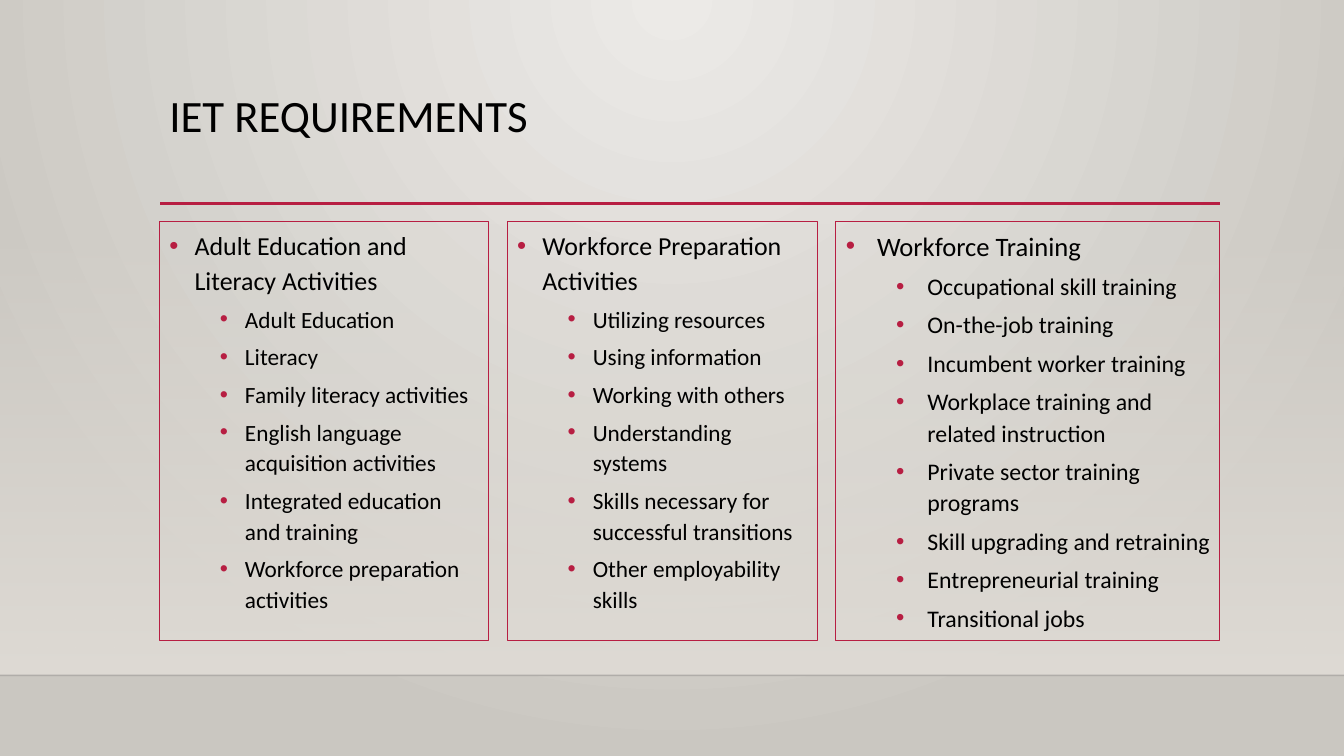
from dataclasses import dataclass

from lxml.etree import SubElement
from pptx import Presentation
from pptx.dml.color import RGBColor
from pptx.enum.shapes import MSO_CONNECTOR as Connector, MSO_SHAPE as Preset
from pptx.enum.text import MSO_ANCHOR as Anchor, MSO_AUTO_SIZE as AutoSize, PP_ALIGN as Align
from pptx.oxml.ns import qn
from pptx.util import Pt

PX = 9144  # EMU in one px, 100 px to the inch
SLIDE_WIDTH, SLIDE_HEIGHT = 1333, 750
TWO_CONTENT = 3


@dataclass(frozen=True)
class Theme:
    font: str = "Calibri"
    text: str = "000000"
    accent: str = "B71E42"
    glow: tuple = ("ECEAE7", "CAC7C1")
    wall: str = "DFDBD5"
    floor_edge: str = "000001"
    title_size: float = 32


THEME = Theme()
PLACEHOLDER_STYLE = {"sizes": (18.5, 16.6), "hanging": 25, "grow": False}
TEXT_BOX_STYLE = {"sizes": (19, 17), "hanging": 31, "grow": True}
LEVEL_STEP = 50

COLUMNS = [
    ((158, 327), PLACEHOLDER_STYLE, "Adult Education and Literacy Activities", [
        "Adult Education", "Literacy", "Family literacy activities",
        "English language acquisition activities",
        "Integrated education and training", "Workforce preparation activities"]),
    ((503, 308), PLACEHOLDER_STYLE, "Workforce Preparation Activities", [
        "Utilizing resources", "Using information", "Working with others",
        "Understanding systems", "Skills necessary for successful transitions",
        "Other employability skills"]),
    ((829, 381), TEXT_BOX_STYLE, "Workforce Training", [
        "Occupational skill training", "On-the-job training",
        "Incumbent worker training", "Workplace training and related instruction",
        "Private sector training programs", "Skill upgrading and retraining",
        "Entrepreneurial training", "Transitional jobs"]),
]


def rgb(value):
    return RGBColor.from_string(value)


def emu(*lengths):
    return [length * PX for length in lengths]


def set_values(target, values):
    for name, value in values.items():
        setattr(target, name, value)


def set_alpha(color_element, percent):
    SubElement(color_element, qn("a:alpha"), val=str(percent * 1000))


def set_gradient(fill, colors):
    fill.gradient()
    for position, (stop, color) in enumerate(zip(fill.gradient_stops, colors)):
        stop.position = position
        stop.color.rgb = rgb(color)


def paint_background(slide):
    """Radial glow centred on the top edge."""
    set_gradient(slide.background.fill, THEME.glow)
    gradient = next(slide.element.iter(qn("a:gradFill")))
    gradient.remove(gradient.find(qn("a:lin")))
    circle = SubElement(gradient, qn("a:path"), path="circle")
    SubElement(circle, qn("a:fillToRect"), l="43000", t="0", r="43000", b="100000")


def add_rule(slide, box, color, weight, alpha=100):
    left, top, width = box
    rule = slide.shapes.add_connector(
        Connector.STRAIGHT, *emu(left, top, left + width, top))
    set_values(rule.line, {"width": Pt(weight)})
    rule.line.color.rgb = rgb(color)
    if alpha < 100:
        set_alpha(next(rule.element.iter(qn("a:srgbClr"))), alpha)
    SubElement(rule.element.spPr, qn("a:effectLst"))


def add_wall(slide, box):
    """Panel fading in downwards, closed by a faint line at its foot."""
    left, top, width, height = box
    wall = slide.shapes.add_shape(Preset.RECTANGLE, *emu(*box))
    wall.shadow.inherit = False
    wall.line.fill.background()
    set_gradient(wall.fill, (THEME.wall, THEME.wall))
    wall.fill.gradient_angle = 270
    set_alpha(next(wall.element.spPr.iter(qn("a:srgbClr"))), 0)
    add_rule(slide, (left, top + height, width), THEME.floor_edge, 1, alpha=20)


def place(shape, box):
    set_values(shape, dict(zip(("left", "top", "width", "height"), emu(*box))))
    shape.element.getparent().append(shape.element)


def write(paragraph, text, size):
    run = paragraph.add_run()
    run.text = text
    set_values(run.font, {"name": THEME.font, "size": Pt(size)})
    run.font.color.rgb = rgb(THEME.text)


def fill_title(title, box):
    place(title, box)
    set_values(title.text_frame, {"word_wrap": True, "auto_size": AutoSize.NONE,
                                  "vertical_anchor": Anchor.TOP})
    paragraph = title.text_frame.paragraphs[0]
    set_values(paragraph, {"alignment": Align.LEFT, "line_spacing": 0.9,
                           "space_before": Pt(0)})
    write(paragraph, "IET REQUIREMENTS", THEME.title_size)


def add_bullet(paragraph, level, hanging):
    properties = paragraph._p.get_or_add_pPr()
    properties.set("marL", str((hanging + level * LEVEL_STEP) * PX))
    properties.set("indent", str(-hanging * PX))
    color = SubElement(properties, qn("a:buClr"))
    SubElement(color, qn("a:srgbClr"), val=THEME.accent)
    SubElement(properties, qn("a:buFont"), typeface="Arial")
    SubElement(properties, qn("a:buChar"), char="•")


def fill_column(shape, box, style, heading, items):
    place(shape, box)
    shape.line.color.rgb = rgb(THEME.accent)
    shape.line.width = Pt(0.75)
    frame = shape.text_frame
    set_values(frame, {
        "word_wrap": True, "vertical_anchor": Anchor.TOP, "margin_right": 8 * PX,
        "auto_size": AutoSize.SHAPE_TO_FIT_TEXT if style["grow"] else AutoSize.NONE})
    for index, text in enumerate([heading, *items]):
        level = min(index, 1)
        paragraph = frame.add_paragraph() if index else frame.paragraphs[0]
        add_bullet(paragraph, level, style["hanging"])
        set_values(paragraph, {"level": level, "alignment": Align.LEFT,
                               "line_spacing": 1.1, "space_before": Pt(5 * level),
                               "space_after": Pt(0)})
        write(paragraph, text, style["sizes"][level])


def build_requirements_slide(presentation):
    slide = presentation.slides.add_slide(presentation.slide_layouts[TWO_CONTENT])
    paint_background(slide)
    add_wall(slide, (0, 221, SLIDE_WIDTH, 449))
    add_rule(slide, (159, 202, 1051), THEME.accent, 2.5)
    title, *bodies = slide.placeholders
    fill_title(title, (158, 88, 1050, 116))
    text_box = slide.shapes.add_textbox(0, 0, PX, PX)
    for shape, ((left, width), *content) in zip([*bodies, text_box], COLUMNS):
        fill_column(shape, (left, 220, width, 415), *content)


def main():
    presentation = Presentation()
    set_values(presentation, {"slide_width": SLIDE_WIDTH * PX,
                              "slide_height": SLIDE_HEIGHT * PX})
    build_requirements_slide(presentation)
    presentation.save("out.pptx")


if __name__ == "__main__":
    main()
